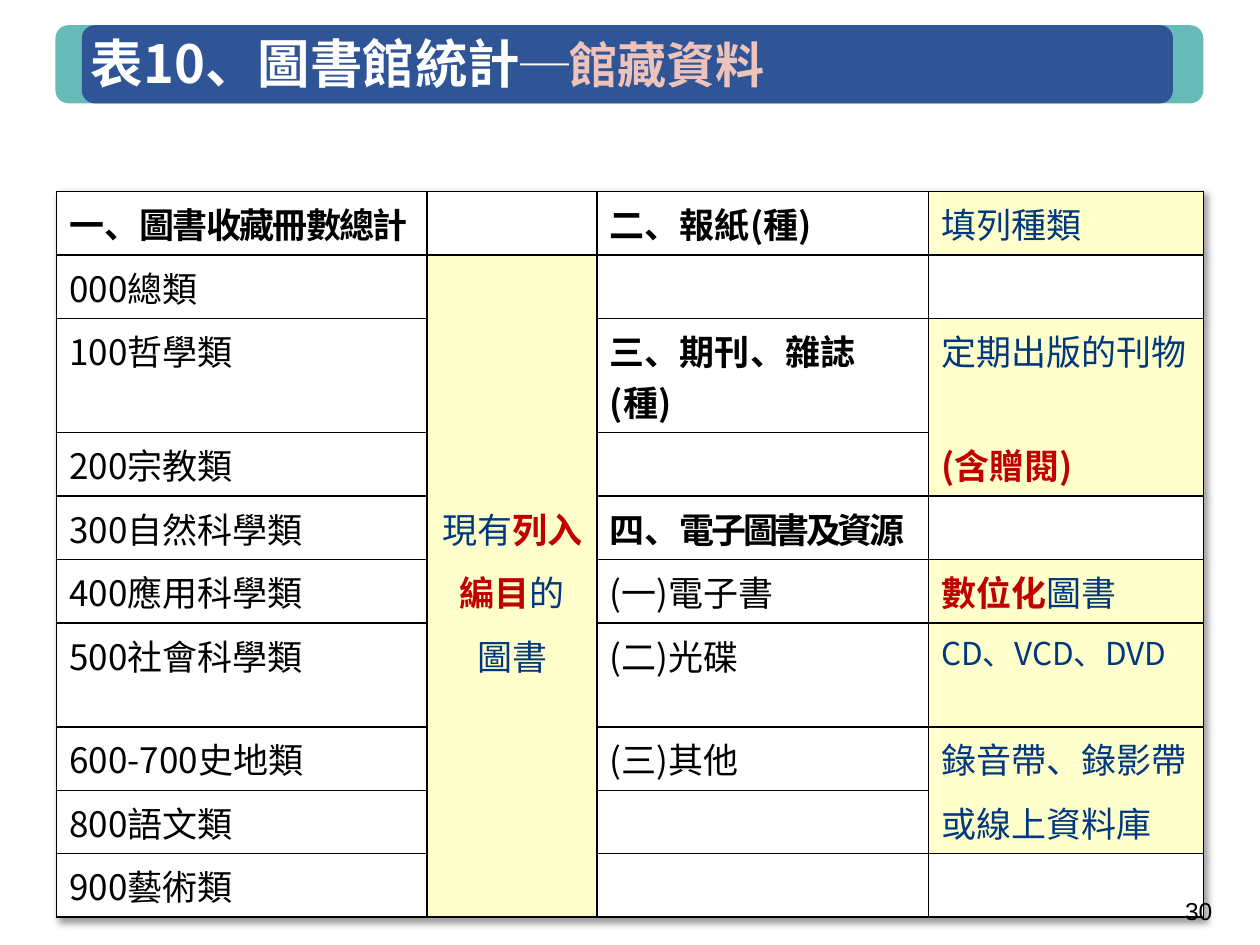
import dataclasses

import pptx
import pptx.dml.color
import pptx.enum.shapes
import pptx.enum.text
import pptx.oxml
import pptx.oxml.ns
import pptx.util
from lxml import etree

Inches = pptx.util.Inches
qn = pptx.oxml.ns.qn
PP_ALIGN = pptx.enum.text.PP_ALIGN
MIDDLE = pptx.enum.text.MSO_ANCHOR.MIDDLE


@dataclasses.dataclass(frozen=True)
class Theme:
    font: str = "Noto Sans CJK SC"
    number_font: str = "Arial"
    teal: str = "66BAB7"
    blue: str = "2F5597"
    white: str = "FFFFFF"
    pink: str = "F0C3BA"
    black: str = "000000"
    navy: str = "00387E"
    red: str = "C00000"
    cream: str = "FFFFCC"
    title_size: int = 30
    subtitle_size: int = 28
    cell_size: int = 20
    small_size: int = 18
    number_size: int = 14


theme = Theme()

# Run styles: size, colour, bold, letter spacing in points
STYLES = {
    "title": (theme.title_size, theme.white, True, 0),
    "dash": (theme.subtitle_size, theme.white, True, 0),
    "subtitle": (theme.subtitle_size, theme.pink, True, 0),
    "plain": (theme.cell_size, theme.black, False, 0),
    "head": (theme.cell_size, theme.black, True, 0),
    "tight": (theme.cell_size, theme.black, True, -1),
    "tighter": (theme.cell_size, theme.black, True, -2),
    "note": (theme.cell_size, theme.navy, False, 0),
    "small": (theme.small_size, theme.navy, False, 0),
    "alert": (theme.cell_size, theme.red, True, 0),
}


def rgb(value):
    return pptx.dml.color.RGBColor.from_string(value)


def add_spans(para, spans):
    """Append (style, text) spans with matching Latin and East Asian fonts."""
    for style, text in spans:
        size, color, bold, spacing = STYLES[style]
        span = para.add_run()
        span.text = text
        span.font.size = pptx.util.Pt(size)
        span.font.bold = bold
        span.font.color.rgb = rgb(color)
        span.font.name = theme.font
        properties = span.font._element
        etree.SubElement(properties, qn("a:ea")).set("typeface", theme.font)
        if spacing:
            properties.set("spc", str(spacing * 100))


deck = pptx.Presentation()
deck.slide_width, deck.slide_height = Inches(10), Inches(7.5)
page = deck.slides.add_slide(deck.slide_layouts[5])

# Title banner, behind the title
banner = page.shapes.add_group_shape()
for left, width, color in [(0.44, 9.11, theme.teal), (0.65, 8.66, theme.blue)]:
    bar = banner.shapes.add_shape(
        pptx.enum.shapes.MSO_SHAPE.ROUNDED_RECTANGLE,
        Inches(left), Inches(0.2), Inches(width), Inches(0.62))
    bar.shadow.inherit = False
    bar.fill.solid()
    bar.fill.fore_color.rgb = rgb(color)
    bar.line.fill.background()

title = page.shapes.title
title._element.addprevious(banner._element)
title.left, title.top = Inches(0.65), Inches(0.14)
title.width, title.height = Inches(8.66), Inches(0.78)
frame = title.text_frame
frame.word_wrap = True
frame.auto_size = pptx.enum.text.MSO_AUTO_SIZE.NONE
frame.vertical_anchor = MIDDLE
frame.margin_left = frame.margin_right = Inches(0.07)
frame.margin_top = frame.margin_bottom = Inches(0.04)
para = frame.paragraphs[0]
para.alignment = PP_ALIGN.LEFT
para.line_spacing = 0.9
add_spans(para, [("title", "表10、圖書館統計"), ("dash", "─"), ("subtitle", "館藏資料")])

# Table content, column by column
CLASSES = ["000總類", "100哲學類", "200宗教類", "300自然科學類", "400應用科學類",
           "500社會科學類", "600-700史地類", "800語文類", "900藝術類"]
COLUMNS = [
    [[("head", "一、"), ("tight", "圖書收藏冊數總計")]]
    + [[("plain", name)] for name in CLASSES],
    [[], [], [], [],
     [("note", "現有"), ("alert", "列入")],
     [("alert", "編目"), ("note", "的")],
     [("note", "圖書")], [], [], []],
    [[("head", "二、報紙(種)")], [],
     [("head", "三、期刊、雜誌(種)")], [],
     [("head", "四、"), ("tighter", "電子圖書及資源")],
     [("plain", "(一)電子書")], [("plain", "(二)光碟")],
     [("plain", "(三)其他")], [], []],
    [[("note", "填列種類")], [],
     [("note", "定期出版的刊物")], [("alert", "(含贈閱)")], [],
     [("alert", "數位化"), ("note", "圖書")],
     [("small", "CD、VCD、DVD")],
     [("note", "錄音帶、錄影帶")], [("note", "或線上資料庫")], []],
]
WIDTHS = [2.94, 1.35, 2.63, 2.18]
# Cream blocks by column: first and last row, with no rules inside
BLOCKS = {1: [(1, 9)], 3: [(0, 0), (2, 3), (5, 5), (6, 6), (7, 8)]}
ROWS = len(COLUMNS[0])

graphic = page.shapes.add_table(
    ROWS, len(COLUMNS), Inches(0.45), Inches(1.52), Inches(sum(WIDTHS)), Inches(0.5 * ROWS))
table = graphic.table
table.first_row = table.horz_banding = False
table._tbl.tblPr.insert(0, pptx.oxml.parse_xml(
    '<a:effectLst xmlns:a="http://schemas.openxmlformats.org/drawingml/2006/main">'
    '<a:outerShdw blurRad="50800" dist="38100" dir="2700000" algn="tl" rotWithShape="0">'
    '<a:srgbClr val="000000"><a:alpha val="40000"/></a:srgbClr>'
    '</a:outerShdw></a:effectLst>'))
for row in table.rows:
    row.height = Inches(0.5)

for column, (width, entries) in enumerate(zip(WIDTHS, COLUMNS)):
    table.columns[column].width = Inches(width)
    for row, spans in enumerate(entries):
        cell = table.cell(row, column)
        block = next(((first, last) for first, last in BLOCKS.get(column, [])
                      if first <= row <= last), None)
        open_sides = set()
        if block and row > block[0]:
            open_sides.add("T")
        if block and row < block[1]:
            open_sides.add("B")
        for side in "LRTB":
            line = etree.SubElement(cell._tc.get_or_add_tcPr(), qn("a:ln" + side))
            if side in open_sides:
                line.set("w", "0")
                etree.SubElement(line, qn("a:noFill"))
            else:
                line.set("w", str(pptx.util.Pt(1)))
                paint = etree.SubElement(line, qn("a:solidFill"))
                etree.SubElement(paint, qn("a:srgbClr")).set("val", theme.black)
        cell.fill.solid()
        cell.fill.fore_color.rgb = rgb(theme.cream if block else theme.white)
        para = cell.text_frame.paragraphs[0]
        para.alignment = PP_ALIGN.CENTER if column == 1 else PP_ALIGN.LEFT
        add_spans(para, spans)

# Page number
box = page.shapes.add_textbox(Inches(7.47), Inches(7.03), Inches(2.25), Inches(0.4))
box.text_frame.word_wrap = True
box.text_frame.vertical_anchor = MIDDLE
box.text_frame.text = "30"
para = box.text_frame.paragraphs[0]
para.alignment = PP_ALIGN.RIGHT
span = para.runs[0]
span.font.name = theme.number_font
span.font.size = pptx.util.Pt(theme.number_size)
span.font.color.rgb = rgb(theme.black)

deck.save("out.pptx")
